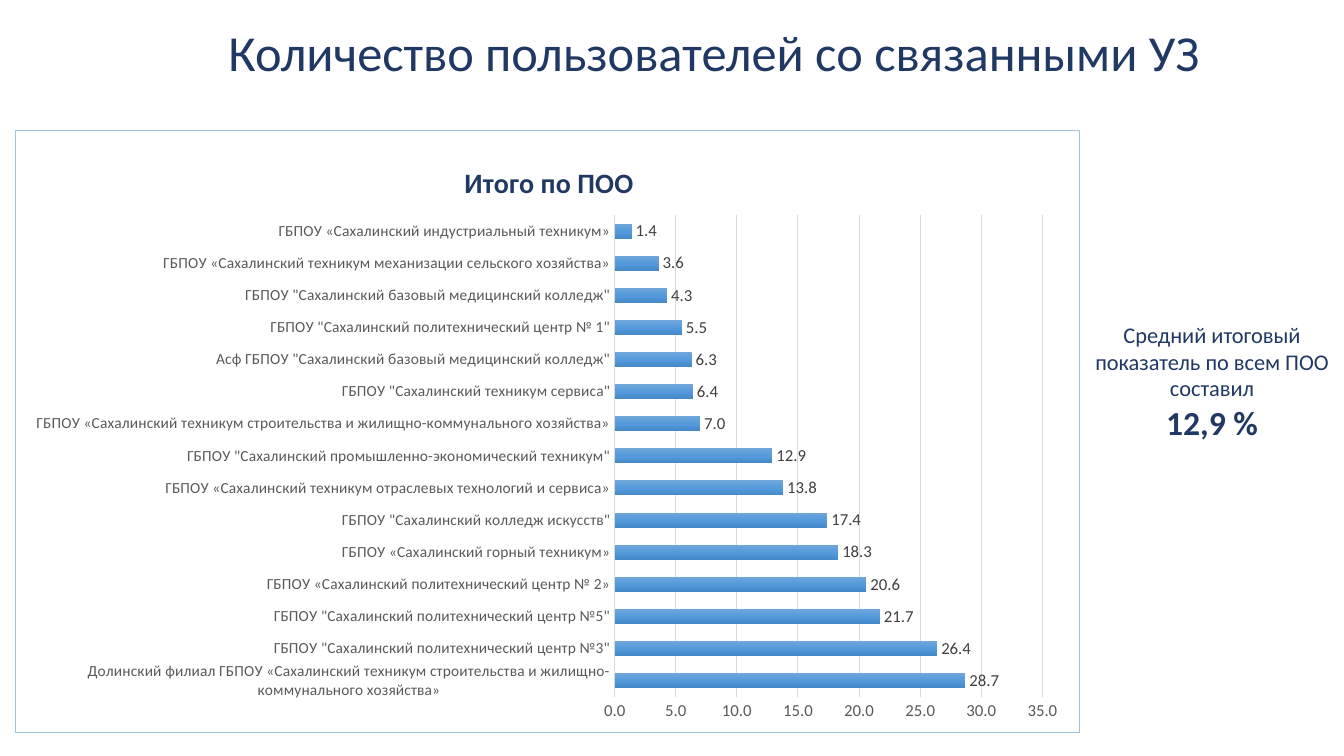
from copy import deepcopy
from dataclasses import dataclass

from pptx import Presentation
from pptx.chart.data import CategoryChartData
from pptx.dml.color import RGBColor
from pptx.enum.chart import XL_CHART_TYPE as ChartType
from pptx.enum.chart import XL_LABEL_POSITION as LabelPosition
from pptx.enum.chart import XL_TICK_MARK as TickMark
from pptx.enum.text import MSO_ANCHOR as Anchor
from pptx.enum.text import MSO_AUTO_SIZE as AutoSize
from pptx.enum.text import PP_ALIGN as Align
from pptx.oxml import parse_xml
from pptx.oxml.ns import nsdecls, qn
from pptx.util import Inches, Pt


@dataclass(frozen=True)
class Theme:
    font: str = "Calibri"
    navy: str = "203864"
    axis_text: str = "595959"
    label_text: str = "404040"
    grid: str = "D9D9D9"
    border: str = "9DC3E6"
    bar_stops: tuple = ("71A6DB", "559BDB", "448ACA")
    heading: int = 36
    figure: int = 24
    chart_title: int = 20
    body: int = 16
    value: int = 12
    category: int = 11


COLUMNS, ROWS = 80, 45
SLIDE_WIDTH, SLIDE_HEIGHT = Inches(13.33), Inches(7.5)

# Share of users with linked accounts, from the bottom bar to the top one
COLLEGES = {
    "Долинский филиал ГБПОУ «Сахалинский техникум строительства и жилищно-коммунального хозяйства»": 28.7,
    'ГБПОУ "Сахалинский политехнический центр №3"': 26.4,
    'ГБПОУ "Сахалинский политехнический центр №5"': 21.7,
    "ГБПОУ «Сахалинский политехнический центр № 2»": 20.6,
    "ГБПОУ «Сахалинский горный техникум»": 18.3,
    'ГБПОУ "Сахалинский колледж искусств"': 17.4,
    "ГБПОУ «Сахалинский техникум отраслевых технологий и сервиса»": 13.8,
    'ГБПОУ "Сахалинский промышленно-экономический техникум"': 12.9,
    "ГБПОУ «Сахалинский техникум строительства и жилищно-коммунального хозяйства»": 7,
    'ГБПОУ "Сахалинский техникум сервиса"': 6.4,
    'Асф ГБПОУ "Сахалинский базовый медицинский колледж"': 6.3,
    'ГБПОУ "Сахалинский политехнический центр № 1"': 5.5,
    'ГБПОУ "Сахалинский базовый медицинский колледж"': 4.3,
    "ГБПОУ «Сахалинский техникум механизации сельского хозяйства»": 3.6,
    "ГБПОУ «Сахалинский индустриальный техникум»": 1.4,
}


def place(column, row, columns, rows):
    """Turn grid units into left, top, width and height."""
    across, down = SLIDE_WIDTH / COLUMNS, SLIDE_HEIGHT / ROWS
    return [int(length) for length in
            (column * across, row * down, columns * across, rows * down)]


def style_font(font, name, size, color, bold=False):
    font.name, font.size, font.bold = name, Pt(size), bold
    font.color.rgb = RGBColor.from_string(color)


def write(paragraph, text, *, name, size, color, bold=False, align=None, spacing=None):
    paragraph.alignment = align
    paragraph.line_spacing = spacing
    run = paragraph.add_run()
    run.text = text
    style_font(run.font, name, size, color, bold)


def style_line(line, color, width):
    line.color.rgb = RGBColor.from_string(color)
    line.width = Pt(width)


def manual_layout(target="", **shares):
    edges = "".join(f'<c:{side}Mode val="edge"/>' for side in "xy")
    values = "".join(f'<c:{key} val="{share}"/>' for key, share in shares.items())
    return parse_xml(f'<c:layout {nsdecls("c")}><c:manualLayout>{target}{edges}{values}'
                     "</c:manualLayout></c:layout>")


class SlideBuilder:
    def __init__(self, slide, theme):
        self.slide, self.theme = slide, theme

    def title(self, text, *cell):
        theme, shape = self.theme, self.slide.shapes.title
        shape.left, shape.top, shape.width, shape.height = place(*cell)
        frame = shape.text_frame
        frame.vertical_anchor, frame.auto_size = Anchor.MIDDLE, AutoSize.NONE
        write(frame.paragraphs[0], text, name=theme.font, size=theme.heading,
              color=theme.navy, align=Align.LEFT, spacing=0.9)

    def text(self, lines, *cell):
        theme = self.theme
        frame = self.slide.shapes.add_textbox(*place(*cell)).text_frame
        frame.word_wrap, frame.auto_size = True, AutoSize.SHAPE_TO_FIT_TEXT
        for index, (text, size, bold) in enumerate(lines):
            paragraph = frame.add_paragraph() if index else frame.paragraphs[0]
            write(paragraph, text, name=theme.font, size=size, bold=bold,
                  color=theme.navy, align=Align.CENTER)

    def bar_chart(self, title, values, *cell):
        theme = self.theme
        data = CategoryChartData(number_format="0.0")
        data.categories = list(values)
        data.add_series("Series 1", list(values.values()))
        chart = self.slide.shapes.add_chart(
            ChartType.BAR_CLUSTERED, *place(*cell), data).chart
        chart.has_legend = False
        style_font(chart.font, theme.font, 10, "000000")

        # Chart title
        chart.has_title = True
        write(chart.chart_title.text_frame.paragraphs[0], title, name=theme.font,
              size=theme.chart_title, color=theme.navy, bold=True)
        chart.chart_title.include_in_layout = False

        self.axes(chart)
        self.bars(chart.plots[0])
        self.frame(chart)

    def axes(self, chart):
        theme = self.theme
        for axis, size in ((chart.category_axis, theme.category),
                           (chart.value_axis, theme.value)):
            axis.major_tick_mark = axis.minor_tick_mark = TickMark.NONE
            style_font(axis.tick_labels.font, theme.font, size, theme.axis_text)
        style_line(chart.category_axis.format.line, theme.grid, 1)
        scale = chart.value_axis
        scale.minimum_scale, scale.maximum_scale, scale.major_unit = 0, 35, 5
        scale.format.line.fill.background()
        scale.has_major_gridlines = True
        style_line(scale.major_gridlines.format.line, theme.grid, 0.75)
        scale.tick_labels.number_format = "0.0"
        scale.tick_labels.number_format_is_linked = False

    def bars(self, plot):
        theme = self.theme
        plot.gap_width, plot.overlap, plot.vary_by_categories = 115, -20, False

        # Gradient of three stops, from top to bottom
        series = plot.series[0]
        series.invert_if_negative = False
        fill = series.format.fill
        fill.gradient()
        fill.gradient_angle = 270
        stop_list = series.format.fill.gradient_stops
        stop_parent = next(series._element.iter(qn("a:gsLst")))
        stop_parent.append(deepcopy(stop_parent[0]))
        stop_list = fill.gradient_stops
        for index, color in enumerate(theme.bar_stops):
            stop_list[index].position = index / 2
            stop_list[index].color.rgb = RGBColor.from_string(color)

        # Value labels
        plot.has_data_labels = True
        labels = plot.data_labels
        labels.show_value, labels.position = True, LabelPosition.OUTSIDE_END
        labels.number_format, labels.number_format_is_linked = "0.0", False
        style_font(labels.font, theme.font, theme.value, theme.label_text)

    def frame(self, chart):
        # Plot area position and the border round the chart
        plot_area = next(chart._chartSpace.iter(qn("c:plotArea")))
        for layout in plot_area.findall(qn("c:layout")):
            plot_area.remove(layout)
        inner = '<c:layoutTarget val="inner"/>'
        plot_area.insert(0, manual_layout(inner, x=0.563, y=0.14, w=0.402, h=0.8))
        title = chart.chart_title._element
        for layout in title.findall(qn("c:layout")):
            title.remove(layout)
        title.find(qn("c:tx")).addnext(manual_layout(x=0.417, y=0.045))
        border = parse_xml(
            f'<c:spPr {nsdecls("c", "a")}><a:noFill/><a:ln w="{Pt(0.75)}"><a:solidFill>'
            f'<a:srgbClr val="{self.theme.border}"/></a:solidFill></a:ln></c:spPr>')
        chart._chartSpace.find(qn("c:txPr")).addprevious(border)


def main():
    presentation = Presentation()
    presentation.slide_width, presentation.slide_height = SLIDE_WIDTH, SLIDE_HEIGHT
    theme = Theme()
    title_only = presentation.slide_layouts[5]
    builder = SlideBuilder(presentation.slides.add_slide(title_only), theme)

    builder.title("Количество пользователей со связанными УЗ", 13, 1.5, 61.5, 3.6)
    builder.bar_chart("Итого по ПОО", COLLEGES, 0.9, 7.75, 63.4, 35.9)
    builder.text([("Средний итоговый показатель по всем ПОО составил", theme.body, False),
                  ("12,9 %", theme.figure, True)], 63.4, 18.8, 17.5, 7.85)

    presentation.save("out.pptx")


if __name__ == "__main__":
    main()
